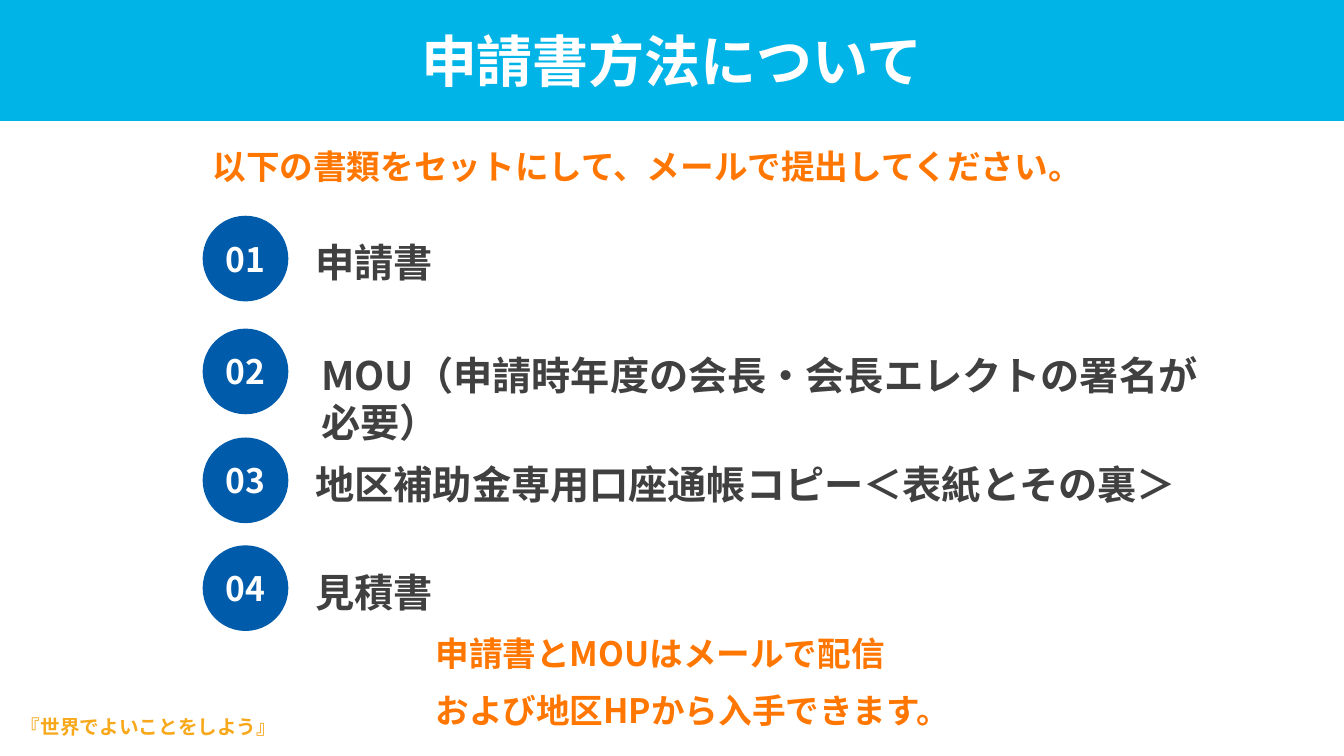
from lxml import etree
from pptx import Presentation
from pptx.dml.color import RGBColor
from pptx.enum.shapes import MSO_SHAPE
from pptx.enum.text import MSO_ANCHOR, MSO_AUTO_SIZE, PP_ALIGN
from pptx.oxml.ns import qn
from pptx.util import Inches, Pt

RECTANGLE = MSO_SHAPE.RECTANGLE
CIRCLE = MSO_SHAPE.FLOWCHART_CONNECTOR
MIDDLE = MSO_ANCHOR.MIDDLE
CENTER = PP_ALIGN.CENTER
GROW = MSO_AUTO_SIZE.SHAPE_TO_FIT_TEXT

FONT = "Noto Sans CJK JP"
SKY, BLUE, ORANGE = "01B4E7", "005CAB", "FF7600"
WHITE, GRAY, GOLD = "FFFFFF", "404040", "F7A81B"

# circle top, text left, text width, text
DOCUMENTS = [
    (2.14, 3.03, 1.42, "申請書"),
    (3.26, 3.09, 9.27, "MOU（申請時年度の会長・会長エレクトの署名が必要）"),
    (4.34, 3.03, 8.81, "地区補助金専用口座通帳コピー＜表紙とその裏＞"),
    (5.41, 3.03, 1.4, "見積書"),
]


def rgb(color):
    return RGBColor.from_string(color)


def set_text(s, text, size, color):
    """Fill the shape with bold text, using one font for Latin and Japanese."""
    tf = s.text_frame
    tf.text = text
    for p in tf.paragraphs:
        for r in p.runs:
            r.font.size = Pt(size)
            r.font.bold = True
            r.font.color.rgb = rgb(color)
            r.font.name = FONT
            ea = etree.SubElement(r.font._element, qn("a:ea"))
            ea.set("typeface", FONT)
    return tf


def add_filled_shape(shapes, kind, box, fill, text, size):
    s = shapes.add_shape(kind, *map(Inches, box))
    s.shadow.inherit = False
    s.fill.solid()
    s.fill.fore_color.rgb = rgb(fill)
    s.line.fill.background()
    tf = set_text(s, text, size, WHITE)
    tf.vertical_anchor = MIDDLE
    tf.paragraphs[0].alignment = CENTER
    return s


def add_label(shapes, box, text, size, color):
    s = shapes.add_textbox(*map(Inches, box))
    tf = set_text(s, text, size, color)
    tf.word_wrap = True
    return tf


def add_notice(shapes, box, text):
    tf = add_label(shapes, box, text, 24, ORANGE)
    tf.auto_size = GROW
    for p in tf.paragraphs:
        p.space_before = p.space_after = Pt(6)


def add_document(slide, number, top, left, width, text):
    shapes = slide.shapes.add_group_shape().shapes
    circle = add_filled_shape(shapes, CIRCLE, (2.01, top, 0.85, 0.85),
                              BLUE, f"{number:02}", 24)
    circle.text_frame.word_wrap = False
    tf = add_label(shapes, (left, top + 0.18, width, 0.57), text, 28, GRAY)
    tf.auto_size = GROW


def add_motto(shapes):
    tf = add_label(shapes, (0.11, 7.07, 2.9, 0.31),
                   "『世界でよいことをしよう』", 14, GOLD)
    p = tf.paragraphs[0]
    p.line_spacing = 0.9
    p.space_before = Pt(10)


def main():
    prs = Presentation()
    prs.slide_width, prs.slide_height = Inches(13.33), Inches(7.5)
    slide = prs.slides.add_slide(prs.slide_layouts[6])

    add_filled_shape(slide.shapes, RECTANGLE, (0, 0, 13.33, 1.2),
                     SKY, "申請書方法について", 40)
    for number, document in enumerate(DOCUMENTS, 1):
        add_document(slide, number, *document)
    add_notice(slide.shapes, (4.22, 6.23, 5.28, 1.08),
               "申請書とMOUはメールで配信\nおよび地区HPから入手できます。")
    add_notice(slide.shapes, (2.01, 1.4, 10.65, 0.5),
               "以下の書類をセットにして、メールで提出してください。")
    add_motto(slide.shapes)

    prs.save("out.pptx")


if __name__ == "__main__":
    main()
